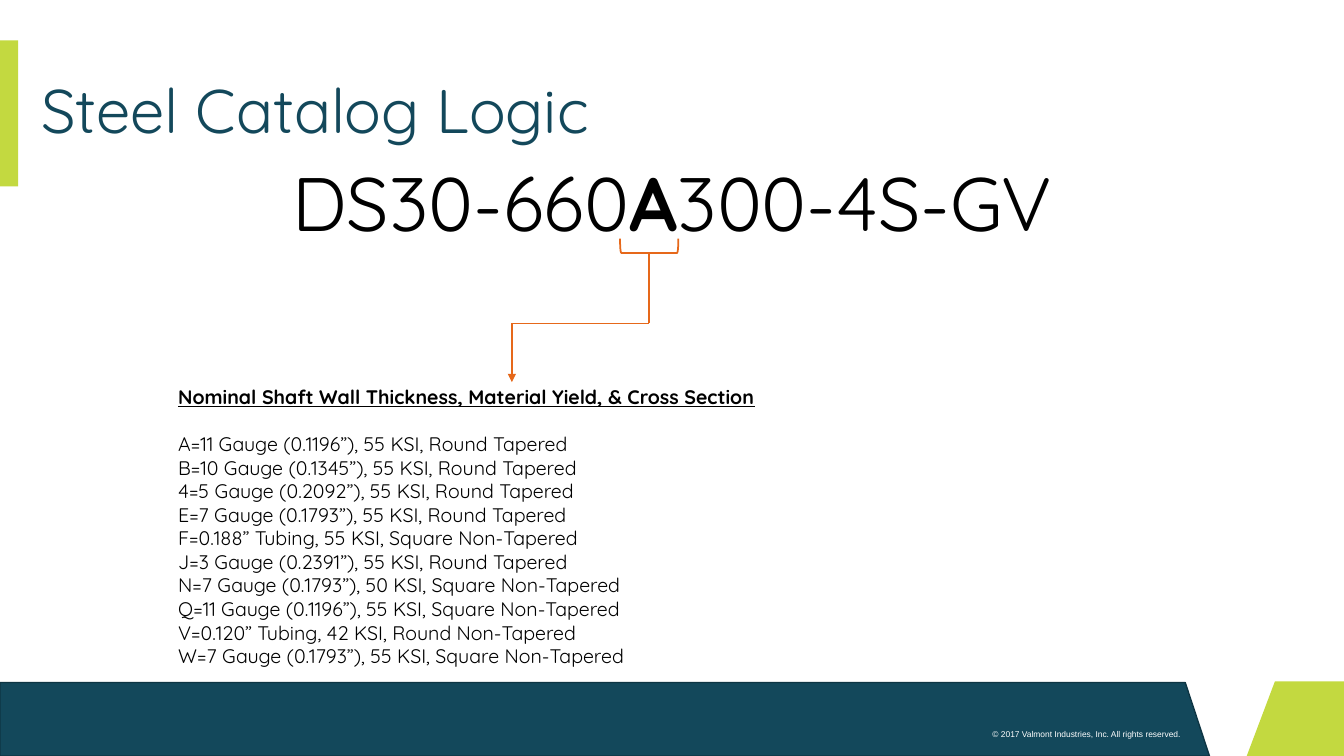
from dataclasses import dataclass, field

from lxml import etree
from pptx import Presentation
from pptx import util as u
from pptx.dml.color import RGBColor
from pptx.enum import shapes, text
from pptx.oxml import ns

Cm, Pt = u.Cm, u.Pt
Point = tuple[float, float]


@dataclass(frozen=True)
class Theme:
    navy: str = "13485B"
    navy_edge: str = "0E3543"
    lime: str = "C3D940"
    orange: str = "E6681A"
    black: str = "000000"
    white: str = "FFFFFF"
    font: str = "Quicksand"
    legal_font: str = "Arial"
    title_size: float = 44
    code_size: float = 54
    body_size: float = 14
    legal_size: float = 6
    rule: float = 1.25


T = Theme()


@dataclass(frozen=True)
class Run:
    text: str
    fmt: dict = field(default_factory=dict)


@dataclass(frozen=True)
class Para:
    runs: list[Run]
    fmt: dict = field(default_factory=dict)


@dataclass(frozen=True)
class TextBlock:
    box: tuple[float, float, float, float]
    paras: list[Para]
    size: float
    color: str
    font: str = T.font
    frame: dict = field(default_factory=dict)


@dataclass(frozen=True)
class Panel:
    points: list[Point]
    fill: str
    edge: str | None = None


@dataclass(frozen=True)
class Segment:
    start: Point
    end: Point
    arrow: bool = False


def apply(target, fmt: dict) -> None:
    for name, value in fmt.items():
        setattr(target, name, value)


def set_line(line, color: str, width: float) -> None:
    line.color.rgb = RGBColor.from_string(color)
    line.width = Pt(width)


def add_text(s, block: TextBlock) -> None:
    tf = s.shapes.add_textbox(*map(Cm, block.box)).text_frame
    apply(tf, {"word_wrap": True, **block.frame})
    for i, para in enumerate(block.paras):
        p = tf.add_paragraph() if i else tf.paragraphs[0]
        apply(p, para.fmt)
        for run in para.runs:
            r = p.add_run()
            r.text = run.text
            apply(r.font, {"name": block.font, "size": Pt(block.size), **run.fmt})
            r.font.color.rgb = RGBColor.from_string(block.color)


def add_panel(s, panel: Panel) -> None:
    start, *rest = [(Cm(x), Cm(y)) for x, y in panel.points]
    builder = s.shapes.build_freeform(*start)
    builder.add_line_segments(rest, close=True)
    sp = builder.convert_to_shape()
    sp.shadow.inherit = False
    sp.fill.solid()
    sp.fill.fore_color.rgb = RGBColor.from_string(panel.fill)
    if panel.edge:
        set_line(sp.line, panel.edge, 1)
    else:
        sp.line.fill.background()


def add_accent(s) -> None:
    sp = s.shapes.add_shape(shapes.MSO_SHAPE.RECTANGLE, Cm(0), Cm(1.02), Cm(0.46), Cm(3.68))
    sp.shadow.inherit = False
    sp.fill.solid()
    sp.fill.fore_color.rgb = RGBColor.from_string(T.lime)
    sp.line.fill.background()


def add_bracket(s) -> None:
    sp = s.shapes.add_shape(
        shapes.MSO_SHAPE.RIGHT_BRACKET, Cm(16.18), Cm(5.46), Cm(0.36), Cm(1.47))
    sp.rotation = 90
    sp.shadow.inherit = False
    sp.fill.background()
    set_line(sp.line, T.orange, T.rule)


def add_segment(s, seg: Segment) -> None:
    sp = s.shapes.add_connector(
        shapes.MSO_CONNECTOR.STRAIGHT, *map(Cm, (*seg.start, *seg.end)))
    set_line(sp.line, T.orange, T.rule)
    sp_pr = sp.element.spPr
    if seg.arrow:
        etree.SubElement(sp_pr.find(ns.qn("a:ln")), ns.qn("a:tailEnd"), type="triangle")
    etree.SubElement(sp_pr, ns.qn("a:effectLst"))


PANELS = [
    Panel([(0, 17.2), (29.87, 17.2), (30.48, 19.05), (0, 19.05)], T.navy, T.navy_edge),
    Panel([(33.87, 17.17), (32.13, 17.17), (31.42, 19.05), (33.87, 19.05)], T.lime),
]

OPTIONS = [
    "A=11 Gauge (0.1196”), 55 KSI, Round Tapered",
    "B=10 Gauge (0.1345”), 55 KSI, Round Tapered",
    "4=5 Gauge (0.2092”), 55 KSI, Round Tapered",
    "E=7 Gauge (0.1793”), 55 KSI, Round Tapered",
    "F=0.188” Tubing, 55 KSI, Square Non-Tapered",
    "J=3 Gauge (0.2391”), 55 KSI, Round Tapered",
    "N=7 Gauge (0.1793”), 50 KSI, Square Non-Tapered",
    "Q=11 Gauge (0.1196”), 55 KSI, Square Non-Tapered",
    "V=0.120” Tubing, 42 KSI, Round Non-Tapered",
    "W=7 Gauge (0.1793”), 55 KSI, Square Non-Tapered",
]
HEADING = Para(
    [Run("Nominal Shaft Wall Thickness, Material Yield, & Cross Section",
         {"bold": True, "underline": True})],
    {"space_after": Pt(16.8)})

TEXTS = [
    TextBlock((23.65, 18.24, 6.35, 0.51),
              [Para([Run("© 2017 Valmont Industries, Inc. All rights reserved.")],
                    {"alignment": text.PP_ALIGN.RIGHT})],
              T.legal_size, T.white, T.legal_font),
    TextBlock((6.91, 3.81, 20.07, 2.57),
              [Para([Run("DS30-660"), Run("A", {"bold": True}), Run("300-4S-GV")],
                    {"alignment": text.PP_ALIGN.CENTER})],
              T.code_size, T.black),
    TextBlock((4.24, 9.58, 23.93, 7.44),
              [HEADING, *(Para([Run(option)]) for option in OPTIONS)],
              T.body_size, T.black),
    TextBlock((0.79, 1.02, 33.08, 3.68),
              [Para([Run("Steel Catalog Logic")], {"line_spacing": 0.9})],
              T.title_size, T.navy,
              frame={"vertical_anchor": text.MSO_ANCHOR.MIDDLE}),
]

STEM_X, ARROW_X, BEND_Y = 16.36, 12.9, 8.15
SEGMENTS = [
    Segment((ARROW_X, BEND_Y), (ARROW_X, 9.63), arrow=True),
    Segment((STEM_X, 6.38), (STEM_X, BEND_Y)),
    Segment((ARROW_X, BEND_Y), (STEM_X, BEND_Y)),
]


def main() -> None:
    prs = Presentation()
    apply(prs, {"slide_width": Cm(33.87), "slide_height": Cm(19.05)})
    s = prs.slides.add_slide(prs.slide_layouts[6])
    for panel in PANELS:
        add_panel(s, panel)
    add_accent(s)
    for block in TEXTS:
        add_text(s, block)
    add_bracket(s)
    for seg in SEGMENTS:
        add_segment(s, seg)
    prs.save("out.pptx")


if __name__ == "__main__":
    main()
